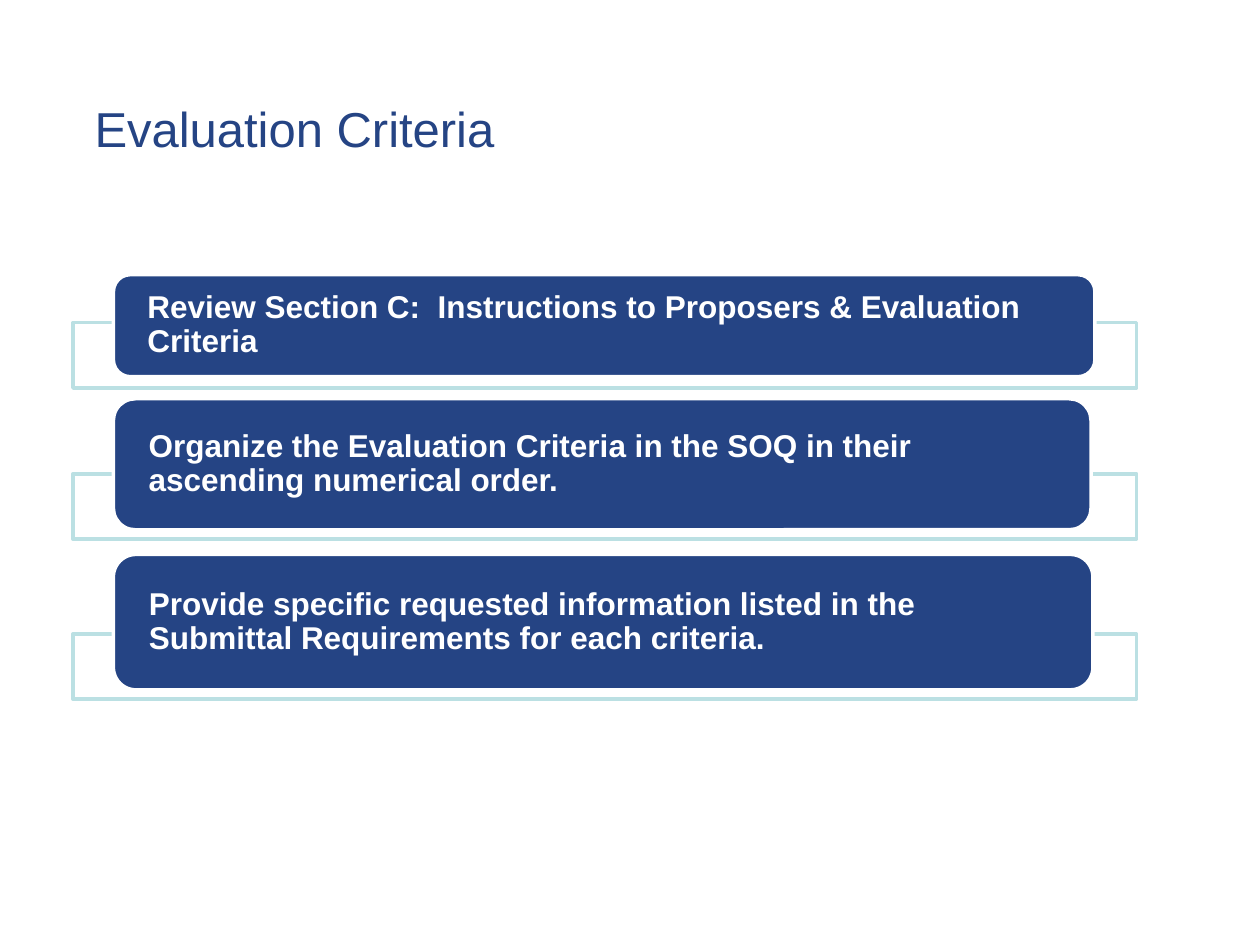
from dataclasses import dataclass

from lxml.etree import SubElement
from pptx import Presentation
from pptx.dml.color import RGBColor
from pptx.enum.shapes import MSO_SHAPE
from pptx.enum.text import MSO_ANCHOR, MSO_AUTO_SIZE, PP_ALIGN
from pptx.oxml.ns import qn
from pptx.shapes.autoshape import Shape
from pptx.slide import Slide
from pptx.text.text import TextFrame
from pptx.util import Pt

COLORS = {"navy": "254484", "aqua": "BBE0E3", "white": "FFFFFF"}
FONT = "Arial"
FRAME_LEFT, FRAME_WIDTH, FRAME_HEIGHT = 41.76, 607.68, 37.44
BAR_LEFT = 64.8
BAR_INSET = 16.56


@dataclass
class Criterion:
    text: str
    frame_top: float
    bar_top: float
    bar_width: float
    bar_height: float


CRITERIA = [
    Criterion("Review Section C:  Instructions to Proposers & Evaluation Criteria",
              184.32, 156.96, 560.88, 58.32),
    Criterion("Organize the Evaluation Criteria in the SOQ in their "
              "ascending numerical order.",
              270.72, 227.88, 558.72, 74.88),
    Criterion("Provide specific requested information listed in the "
              "Submittal Requirements for each criteria.",
              362.16, 316.8, 559.8, 77.4),
]


def rgb(name: str) -> RGBColor:
    return RGBColor.from_string(COLORS[name])


def add_box(s: Slide, kind: MSO_SHAPE, left: float, top: float, width: float,
            height: float, fill: str, line: str) -> Shape:
    sp = s.shapes.add_shape(kind, Pt(left), Pt(top), Pt(width), Pt(height))
    sp.shadow.inherit = False
    sp.fill.solid()
    sp.fill.fore_color.rgb = rgb(fill)
    sp.line.color.rgb = rgb(line)
    sp.line.width = Pt(2)
    return sp


def set_text(tf: TextFrame, text: str, size: float, color: str, bold: bool,
             anchor: MSO_ANCHOR, inset: float = 0) -> None:
    tf.word_wrap = True
    tf.auto_size = MSO_AUTO_SIZE.NONE
    tf.vertical_anchor = anchor
    tf.margin_left = tf.margin_right = Pt(inset)
    tf.margin_top = tf.margin_bottom = 0
    p = tf.paragraphs[0]
    p.text = text
    p.alignment = PP_ALIGN.LEFT
    p.font.name = FONT
    p.font.size = Pt(size)
    p.font.bold = bold
    p.font.color.rgb = rgb(color)


def add_criterion(s: Slide, c: Criterion) -> None:
    """Draw the outlined frame and, over it, the bar that holds the text."""
    frame = add_box(s, MSO_SHAPE.RECTANGLE, FRAME_LEFT, c.frame_top,
                    FRAME_WIDTH, FRAME_HEIGHT, "white", "aqua")
    fill_color = frame._element.spPr.find(qn("a:solidFill"))[0]
    SubElement(fill_color, qn("a:alpha"), val="90000")

    bar = add_box(s, MSO_SHAPE.ROUNDED_RECTANGLE, BAR_LEFT, c.bar_top,
                  c.bar_width, c.bar_height, "navy", "white")
    set_text(bar.text_frame, c.text, 18, "white", True, MSO_ANCHOR.MIDDLE, BAR_INSET)
    bar.text_frame.paragraphs[0].line_spacing = 0.9


def main() -> None:
    prs = Presentation()
    prs.slide_width, prs.slide_height = Pt(720), Pt(540)
    s = prs.slides.add_slide(prs.slide_layouts[5])

    title = s.shapes.title
    title.left, title.top, title.width, title.height = Pt(54), Pt(0), Pt(486), Pt(90)
    set_text(title.text_frame, "Evaluation Criteria", 28, "navy", False,
             MSO_ANCHOR.BOTTOM)
    title.text_frame.paragraphs[0].line_spacing = Pt(28)

    for criterion in CRITERIA:
        add_criterion(s, criterion)

    prs.save("out.pptx")


if __name__ == "__main__":
    main()
